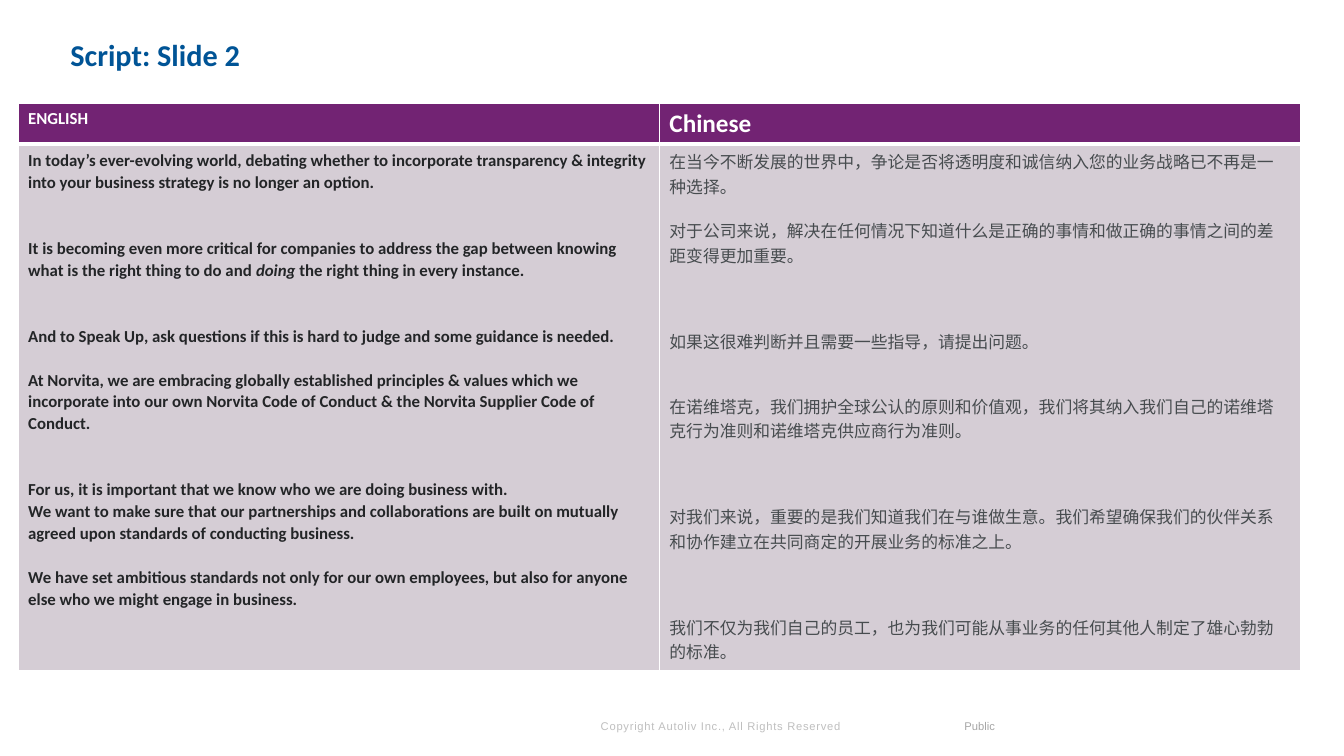
from dataclasses import dataclass

from lxml.etree import SubElement
from pptx import Presentation
from pptx.dml.color import RGBColor
from pptx.enum.shapes import MSO_SHAPE
from pptx.enum.text import MSO_ANCHOR, PP_ALIGN
from pptx.oxml.ns import qn
from pptx.util import Inches, Pt


@dataclass(frozen=True)
class Theme:
    white: str = "FFFFFF"
    title: str = "005496"
    header: str = "722373"
    body: str = "D5CDD5"
    english: str = "232527"
    chinese: str = "474C4F"
    copyright: str = "BFBFBF"
    label: str = "A6A6A6"
    heading_font: str = "Calibri"
    footer_font: str = "Arial"
    title_size: float = 21.6
    chinese_header_size: float = 18
    text_size: float = 12
    footer_size: float = 8
    english_gap: float = 15.7
    chinese_gap: float = 14.65


THEME = Theme()

ENGLISH = [
    (0, ["In today’s ever-evolving world, debating whether to incorporate transparency & integrity "
         "into your business strategy is no longer an option."]),
    (2, ["It is becoming even more critical for companies to address the gap between knowing "
         "what is the right thing to do and ", "doing ", "the right thing in every instance."]),
    (2, ["And to Speak Up, ask questions if this is hard to judge and some guidance is needed."]),
    (1, ["At Norvita, we are embracing globally established principles & values which we "
         "incorporate into our own Norvita Code of Conduct & the Norvita Supplier Code of Conduct."]),
    (2, ["For us, it is important that we know who we are doing business with."]),
    (0, ["We want to make sure that our partnerships and collaborations are built on mutually "
         "agreed upon standards of conducting business."]),
    (1, ["We have set ambitious standards not only for our own employees, but also for anyone "
         "else who we might engage in business."]),
]

CHINESE = [
    (0, ["在当今不断发展的世界中，争论是否将透明度和诚信纳入您的业务战略已不再是一种选择。"]),
    (1, ["对于公司来说，解决在任何情况下知道什么是正确的事情和做正确的事情之间的差距变得更加重要。"]),
    (3, ["如果这很难判断并且需要一些指导，请提出问题。"]),
    (2, ["在诺维塔克，我们拥护全球公认的原则和价值观，我们将其纳入我们自己的诺维塔克行为准则和诺维塔克供应商行为准则。"]),
    (3, ["对我们来说，重要的是我们知道我们在与谁做生意。我们希望确保我们的伙伴关系和协作建立在共同商定的开展业务的标准之上。"]),
    (3, ["我们不仅为我们自己的员工，也为我们可能从事业务的任何其他人制定了雄心勃勃的标准。"]),
]


def set_all(target, values):
    for name, value in values.items():
        setattr(target, name, value)


def write_span(para, text, color, size, font=THEME.heading_font, bold=False, italic=False):
    span = para.add_run()
    span.text = text
    set_all(span.font, {"name": font, "size": Pt(size), "bold": bold, "italic": italic})
    span.font.color.rgb = RGBColor.from_string(color)
    return span


def set_frame(frame, anchor, left=0, top=0, right=0, bottom=0):
    set_all(frame, {
        "word_wrap": True, "vertical_anchor": anchor,
        "margin_left": Inches(left), "margin_top": Inches(top),
        "margin_right": Inches(right), "margin_bottom": Inches(bottom),
    })


def add_title(page, text):
    box = page.shapes.add_textbox(Inches(0.6), Inches(0.33), Inches(12.22), Inches(1.08))
    set_frame(box.text_frame, MSO_ANCHOR.TOP, left=0.1, top=0.07)
    para = box.text_frame.paragraphs[0]
    para.line_spacing = 0.9
    write_span(para, text, THEME.title, THEME.title_size, bold=True)


def add_copyright(page, text):
    box = page.shapes.add_textbox(Inches(5.86), Inches(7.09), Inches(2.72), Inches(0.23))
    set_frame(box.text_frame, MSO_ANCHOR.BOTTOM, 0.1, 0.05, 0.1, 0.05)
    span = write_span(box.text_frame.paragraphs[0], text, THEME.copyright,
                      THEME.footer_size, THEME.footer_font)
    span.font._element.set("spc", "50")


def add_label(page, text):
    box = page.shapes.add_shape(MSO_SHAPE.RECTANGLE, Inches(8.91), Inches(7.03),
                                Inches(0.96), Inches(0.24))
    box.shadow.inherit = False
    box.line.fill.background()
    box.fill.solid()
    box.fill.fore_color.rgb = RGBColor.from_string(THEME.white)
    color = box._element.spPr.find(qn("a:solidFill")).find(qn("a:srgbClr"))
    SubElement(color, qn("a:alpha"), val="50000")
    set_frame(box.text_frame, MSO_ANCHOR.BOTTOM)
    para = box.text_frame.paragraphs[0]
    para.alignment = PP_ALIGN.RIGHT
    write_span(para, text, THEME.label, THEME.footer_size, THEME.footer_font)


def format_cell(cell, fill, bottom_width):
    properties = cell._tc.get_or_add_tcPr()
    for side, width in {"L": 1, "R": 1, "T": 1, "B": bottom_width}.items():
        line = SubElement(properties, qn(f"a:ln{side}"), w=str(Pt(width)))
        SubElement(SubElement(line, qn("a:solidFill")), qn("a:srgbClr"), val=THEME.white)
    cell.fill.solid()
    cell.fill.fore_color.rgb = RGBColor.from_string(fill)


def fill_body(cell, paragraphs, gap, color, bold, line_spacing):
    format_cell(cell, THEME.body, 1)
    frame = cell.text_frame
    for index, (blank_lines, texts) in enumerate(paragraphs):
        para = frame.add_paragraph() if index else frame.paragraphs[0]
        para.line_spacing = line_spacing
        if blank_lines:
            para.space_before = Pt(blank_lines * gap)
        for position, text in enumerate(texts):
            write_span(para, text, color, THEME.text_size, bold=bold, italic=position == 1)


def add_script_table(page):
    table = page.shapes.add_table(2, 2, Inches(0.18), Inches(1.03),
                                  Inches(12.72), Inches(5.62)).table
    table.horz_banding = False
    for row, height in zip(table.rows, (0.4, 5.22)):
        row.height = Inches(height)
    headers = [("ENGLISH", THEME.text_size), ("Chinese", THEME.chinese_header_size)]
    for column, (text, size) in enumerate(headers):
        cell = table.cell(0, column)
        format_cell(cell, THEME.header, 3)
        write_span(cell.text_frame.paragraphs[0], text, THEME.white, size, bold=True)
    fill_body(table.cell(1, 0), ENGLISH, THEME.english_gap, THEME.english, True, 1.07)
    fill_body(table.cell(1, 1), CHINESE, THEME.chinese_gap, THEME.chinese, False, 1.0)


def main():
    deck = Presentation()
    set_all(deck, {"slide_width": Inches(13.33), "slide_height": Inches(7.5)})
    page = deck.slides.add_slide(deck.slide_layouts[6])
    add_copyright(page, "Copyright Autoliv Inc., All Rights Reserved")
    add_label(page, "Public")
    add_title(page, "Script: Slide 2")
    add_script_table(page)
    deck.save("out.pptx")


if __name__ == "__main__":
    main()
